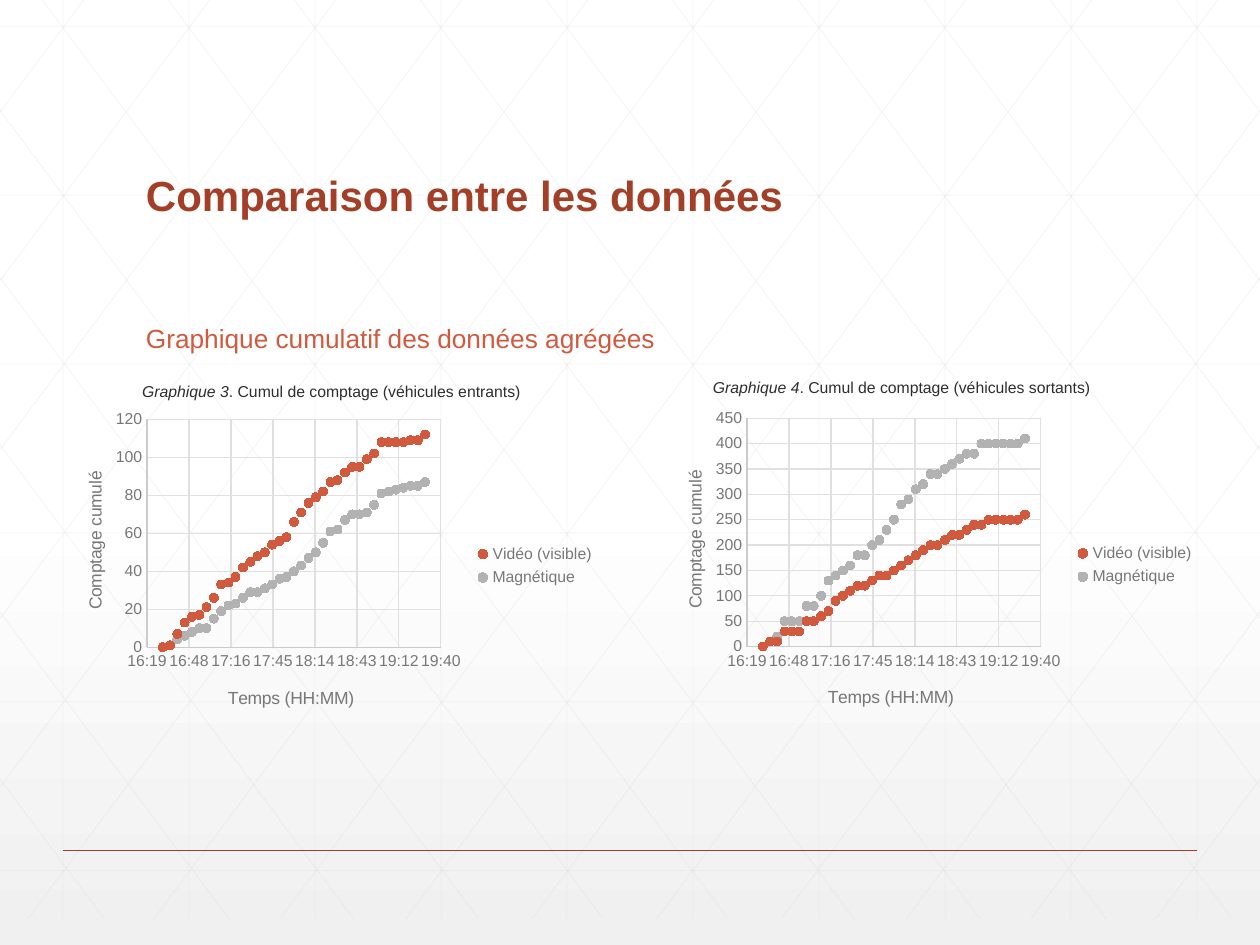
from pptx import Presentation
from pptx.chart.data import XyChartData
from pptx.dml.color import RGBColor
from pptx.enum.chart import XL_CHART_TYPE as ChartType, XL_LEGEND_POSITION as LegendPos
from pptx.enum.chart import XL_MARKER_STYLE as Marker, XL_TICK_MARK as TickMark
from pptx.enum.shapes import MSO_CONNECTOR as Connector
from pptx.enum.text import MSO_ANCHOR as Anchor, MSO_AUTO_SIZE as AutoSize
from pptx.oxml import parse_xml
from pptx.oxml.ns import nsdecls, qn
from pptx.oxml.xmlchemy import OxmlElement
from pptx.util import Pt

RUST, ORANGE, SILVER, INK, GREY = "A43F27", "D15A3E", "B2B2B2", "2D2E2D", "767876"
WIDTH, HEIGHT = 720, 540
MESH_TOP, MESH_BOTTOM, MESH_RUN = -15, 525, 403
SERIES = {"Vidéo (visible)": ORANGE, "Magnétique": SILVER}
DAY = 44000
TIMES = [round(DAY + (16 * 60 + 30 + 5 * step) / 1440, 4) for step in range(37)]
ENTERING = [
    [0, 1, 7, 13, 16, 17, 21, 26, 33, 34, 37, 42, 45, 48, 50, 54, 56, 58, 66, 71, 76, 79, 82,
     87, 88, 92, 95, 95, 99, 102, 108, 108, 108, 108, 109, 109, 112],
    [0, 1, 4, 6, 8, 10, 10, 15, 19, 22, 23, 26, 29, 29, 31, 33, 36, 37, 40, 43, 47, 50, 55,
     61, 62, 67, 70, 70, 71, 75, 81, 82, 83, 84, 85, 85, 87],
]
LEAVING = [
    [0, 10, 10, 30, 30, 30, 50, 50, 60, 70, 90, 100, 110, 120, 120, 130, 140, 140, 150, 160,
     170, 180, 190, 200, 200, 210, 220, 220, 230, 240, 240, 250, 250, 250, 250, 250, 260],
    [0, 10, 20, 50, 50, 50, 80, 80, 100, 130, 140, 150, 160, 180, 180, 200, 210, 230, 250, 280,
     290, 310, 320, 340, 340, 350, 360, 370, 380, 380, 400, 400, 400, 400, 400, 400, 410],
]


def rgb(code):
    """Turn a hex string into a colour."""
    return RGBColor.from_string(code)


def set_values(target, values):
    """Set each named attribute of the target."""
    for name, value in values.items():
        setattr(target, name, value)


def style_font(font, size, color, **values):
    """Apply typeface, size, colour and any further font values."""
    set_values(font, {"name": "Arial", "size": Pt(size), "bold": False, **values})
    font.color.rgb = rgb(color)


def style_line(line, color, width):
    """Give a line its colour and width."""
    line.color.rgb = rgb(color)
    line.width = Pt(width)


def add_rule(slide, start, end, color, width, opacity=100):
    """Draw a straight line without shadow."""
    rule = slide.shapes.add_connector(Connector.STRAIGHT, *map(Pt, start + end))
    style_line(rule.line, color, width)
    if opacity < 100:
        alpha = OxmlElement("a:alpha")
        alpha.set("val", str(opacity * 1000))
        rule.element.spPr.find(".//" + qn("a:srgbClr")).append(alpha)
    rule.element.spPr.append(OxmlElement("a:effectLst"))


def add_mesh(slide):
    """Draw the pale background mesh of upright, level and slanted lines."""
    lines = [((36 + 72 * col, MESH_TOP), (36 + 72 * col, MESH_BOTTOM)) for col in range(10)]
    lines += [((0, 15 + 96.5 * row), (WIDTH, 15 + 96.5 * row)) for row in range(6)]
    slope = (MESH_BOTTOM - MESH_TOP) / MESH_RUN
    for index in range(-5, 10):
        top_x = 13 + index * (72 if index >= 0 else 71.3)
        left, right = max(top_x, 0), min(top_x + MESH_RUN, WIDTH)
        upper, lower = (MESH_TOP + slope * (x - top_x) for x in (left, right))
        lines += [((left, upper), (right, lower)),
                  ((WIDTH - left, upper), (WIDTH - right, lower))]
    for start, end in lines:
        add_rule(slide, start, end, "D9D9D9", 0.5, opacity=25)


def add_text(slide, box, runs, frame_values, spacing=1.0):
    """Add a one-paragraph text box from (text, font values) runs."""
    frame = slide.shapes.add_textbox(*map(Pt, box)).text_frame
    set_values(frame, frame_values)
    paragraph = frame.paragraphs[0]
    paragraph.line_spacing = spacing
    for wording, font_values in runs:
        run = paragraph.add_run()
        run.text = wording
        style_font(run.font, **font_values)


def add_caption(slide, left, top, label, wording):
    """Add a chart caption with its label in italics."""
    plain = {"size": 9, "color": INK}
    add_text(slide, (left, top, 232, 18), [(label, {**plain, "italic": True}), (wording, plain)],
             {"word_wrap": False, "auto_size": AutoSize.SHAPE_TO_FIT_TEXT})


def place(element, position, **fractions):
    """Fix a chart part at fractions of the chart, as child number position."""
    current = element.find(qn("c:layout"))
    if current is not None:
        element.remove(current)
    target = '<c:layoutTarget val="inner"/>' if "w" in fractions else ""
    modes = '<c:xMode val="edge"/><c:yMode val="edge"/>'
    sizes = "".join(f'<c:{key} val="{value}"/>' for key, value in fractions.items())
    element.insert(position, parse_xml(
        f'<c:layout {nsdecls("c")}><c:manualLayout>{target}{modes}{sizes}'
        "</c:manualLayout></c:layout>"))


def style_axis(axis, title, scale, number_format, x, y):
    """Format an axis and place its title."""
    low, high, step = scale
    set_values(axis, {"minimum_scale": low, "maximum_scale": high, "major_unit": step,
                      "has_major_gridlines": True, "major_tick_mark": TickMark.NONE,
                      "minor_tick_mark": TickMark.NONE})
    set_values(axis.tick_labels, {"number_format": number_format,
                                  "number_format_is_linked": False})
    style_font(axis.tick_labels.font, 9, GREY)
    style_line(axis.format.line, "CACBCA", 0.75)
    style_line(axis.major_gridlines.format.line, "DFE0DF", 0.75)
    heading = axis.axis_title
    heading.text_frame.text = title
    style_font(heading.text_frame.paragraphs[0].runs[0].font, 10, GREY)
    place(heading.element, 1, x=x, y=y)


def add_count_chart(slide, box, counts, scale):
    """Add a scatter chart of cumulative counts over time."""
    data = XyChartData()
    for name, values in zip(SERIES, counts):
        series = data.add_series(name)
        for time, count in zip(TIMES, values):
            series.add_data_point(time, count)
    chart = slide.shapes.add_chart(ChartType.XY_SCATTER, *map(Pt, box), data).chart
    set_values(chart, {"has_title": False, "has_legend": True})
    style_font(chart.font, 10, INK)
    set_values(chart.legend, {"position": LegendPos.RIGHT, "include_in_layout": False})
    style_font(chart.legend.font, 9, GREY)
    plot = chart.plots[0]
    plot.vary_by_categories = False
    for series, color in zip(plot.series, SERIES.values()):
        series.smooth = False
        series.format.line.fill.background()
        set_values(series.marker, {"style": Marker.CIRCLE, "size": 5})
        series.marker.format.fill.solid()
        series.marker.format.fill.fore_color.rgb = rgb(color)
        style_line(series.marker.format.line, color, 0.75)
    style_axis(chart.category_axis, "Temps (HH:MM)", (DAY + 0.68, DAY + 0.82, 0.02), "hh:mm",
               x=0.31, y=0.86)
    style_axis(chart.value_axis, "Comptage cumulé", scale, "General", x=0.05, y=0.2)
    place(chart.element.find(".//" + qn("c:plotArea")), 0, x=0.17, y=0.05, w=0.53, h=0.7)


def add_background(slide):
    """Fill the background with a gradient from white to pale grey."""
    fill = slide.background.fill
    fill.gradient()
    fill.gradient_angle = 270
    for stop, position, color in zip(fill.gradient_stops, (0.53, 1), ("FFFFFF", "F0F0F0")):
        stop.position = position
        stop.color.rgb = rgb(color)


def main():
    """Build the slide and save it."""
    deck = Presentation()
    set_values(deck, {"slide_width": Pt(WIDTH), "slide_height": Pt(HEIGHT)})
    slide = deck.slides.add_slide(deck.slide_layouts[6])
    add_background(slide)
    add_mesh(slide)
    add_rule(slide, (36, 486), (684, 486), RUST, 1)
    add_text(slide, (76.3, 39.6, 567.4, 90),
             [("Comparaison entre les données", {"size": 24, "color": RUST, "bold": True})],
             {"word_wrap": True, "vertical_anchor": Anchor.BOTTOM}, spacing=0.9)
    add_text(slide, (76.3, 175, 381.6, 38.2),
             [("Graphique cumulatif des données agrégées", {"size": 15, "color": ORANGE})],
             {"word_wrap": True, "vertical_anchor": Anchor.MIDDLE}, spacing=0.9)
    add_count_chart(slide, (30.2, 230.4, 316.8, 186), ENTERING, (0, 120, 20))
    add_count_chart(slide, (373, 229.7, 316.8, 186.5), LEAVING, (0, 450, 50))
    add_caption(slide, 74.2, 214.6, "Graphique 3", ". Cumul de comptage (véhicules entrants)")
    add_caption(slide, 400.3, 212.4, "Graphique 4", ". Cumul de comptage (véhicules sortants)")
    deck.save("out.pptx")


if __name__ == "__main__":
    main()
